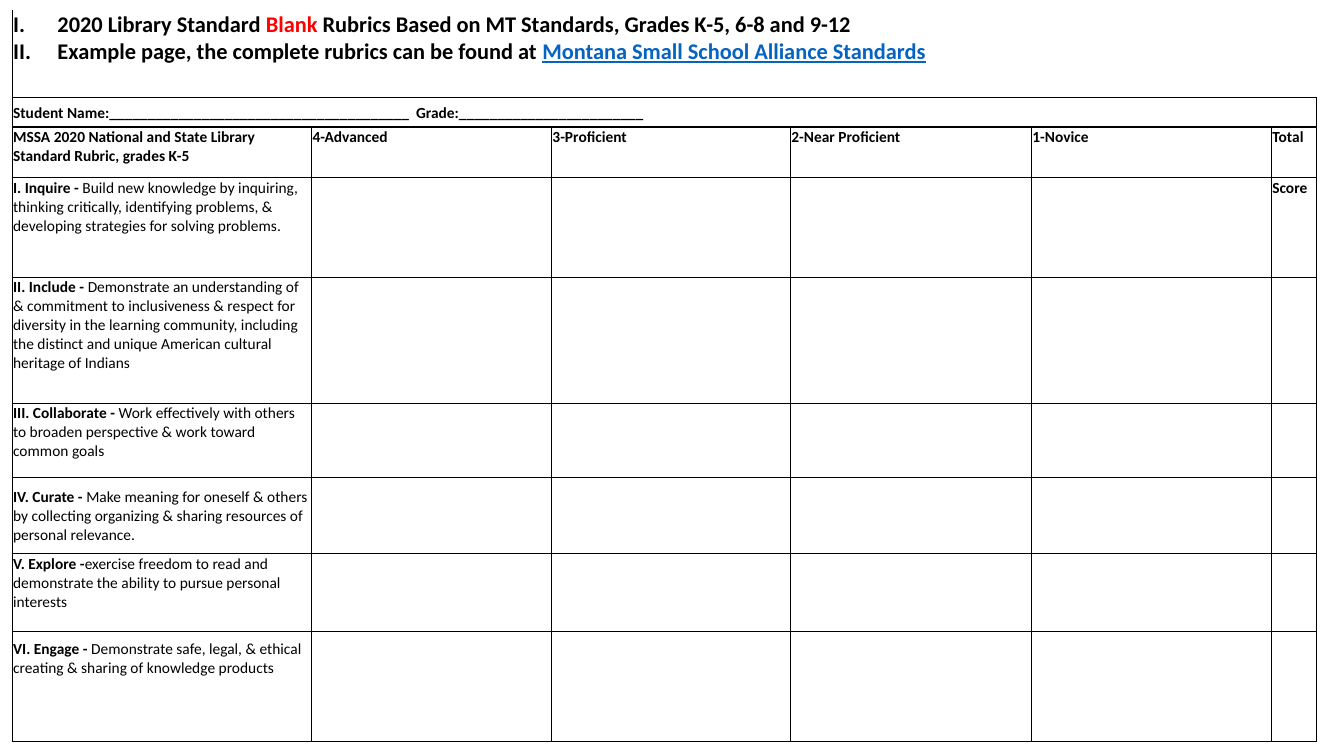
import pptx
import pptx.dml.color
import pptx.enum.text
import pptx.oxml
import pptx.oxml.ns
import pptx.util
from lxml import etree

Inches = pptx.util.Inches
Pt = pptx.util.Pt
qn = pptx.oxml.ns.qn

FONT = "Calibri"
COLORS = {"text": "000000", "accent": "FF0000", "link": "0563C1"}
NO_GRID_STYLE = "{2D5ABB26-0587-4C30-8999-92F81FD0307C}"
COL_WIDTHS = [2.97, 2.38, 2.37, 2.39, 2.38, 0.45]
ROW_HEIGHTS = [0.87, 0.29, 0.5, 0.99, 1.25, 0.74, 0.75, 0.77, 1.1]

TITLE = [
    [("2020 Library Standard ", "text"), ("Blank ", "accent"),
     ("Rubrics Based on MT Standards, Grades K-5, 6-8 and 9-12", "text")],
    [("Example page, the complete rubrics can be found at ", "text"),
     ("Montana Small School Alliance Standards", "link")],
]
STUDENT_LINE = "Student Name:" + "_" * 39 + "  Grade:" + "_" * 24
HEADINGS = ["MSSA 2020 National and State Library Standard Rubric, grades K-5",
            "4-Advanced", "3-Proficient", "2-Near Proficient", "1-Novice", "Total"]
STANDARDS = [
    ("I. Inquire - ", "Build new knowledge by inquiring, thinking critically, "
     "identifying problems, & developing strategies for solving problems."),
    ("II. Include - ", "Demonstrate an understanding of & commitment to inclusiveness "
     "& respect for diversity in the learning community, including the distinct and "
     "unique American cultural heritage of Indians"),
    ("III. Collaborate - ", "Work effectively with others to broaden perspective "
     "& work toward common goals"),
    ("IV. Curate -", " Make meaning for oneself & others by collecting organizing "
     "& sharing resources of personal relevance."),
    ("V. Explore -", "exercise freedom to read and demonstrate the ability to pursue "
     "personal interests"),
    ("VI. Engage - ", "Demonstrate safe, legal, & ethical creating & sharing of "
     "knowledge products"),
]


def add_run(p, text, size=11, bold=True, color="text"):
    r = p.add_run()
    r.text = text
    r.font.name = FONT
    r.font.size = Pt(size)
    r.font.bold = bold
    r.font.underline = color == "link"
    r.font.color.rgb = pptx.dml.color.RGBColor.from_string(COLORS[color])


def number_paragraph(p):
    """Give the paragraph an upper-case Roman number and a hanging indent."""
    pPr = p._p.get_or_add_pPr()
    pPr.set("marL", str(Inches(0.44)))
    pPr.set("indent", str(-Inches(0.44)))
    etree.SubElement(pPr, qn("a:buFont"), typeface="+mj-lt")
    etree.SubElement(pPr, qn("a:buAutoNum"), type="romanUcPeriod")


def set_borders(cell, widths):
    """Draw the edges in widths (L, R, T, B to points) and clear the others."""
    tcPr = cell._tc.get_or_add_tcPr()
    for edge in "LRTB":
        ln = etree.SubElement(tcPr, qn("a:ln" + edge), w=str(Pt(widths.get(edge, 0.5))))
        if edge in widths:
            fill = etree.SubElement(ln, qn("a:solidFill"))
            etree.SubElement(fill, qn("a:srgbClr"), val=COLORS["text"])
        else:
            etree.SubElement(ln, qn("a:noFill"))


def cell_edges(row, col, last_row, last_col):
    if row == 0:
        edges = {"B": 1}
    elif row == 1:
        edges = {"T": 1, "B": 1}
    else:
        edges = dict.fromkeys("LRTB", 0.5)
        if row == 2:
            edges["T"] = 1
        if row == last_row and col < 3:
            edges["B"] = 1
    if col == 0:
        edges["L"] = 1
    if row == 1 and col == last_col:
        edges["R"] = 1
    return edges


def format_cell(cell, edges):
    cell.margin_left = cell.margin_right = cell.margin_top = Inches(0.01)
    cell.margin_bottom = 0
    set_borders(cell, edges)
    cell.fill.background()
    p = cell.text_frame.paragraphs[0]._p
    etree.SubElement(p, qn("a:endParaRPr"), sz="1100")


def add_rubric_table(s):
    frame = s.shapes.add_table(len(ROW_HEIGHTS), len(COL_WIDTHS), Inches(0.12), Inches(0.1),
                               Inches(sum(COL_WIDTHS)), Inches(sum(ROW_HEIGHTS)))
    table = frame.table
    table.first_row = table.horz_banding = False
    table._tbl.tblPr.find(qn("a:tableStyleId")).text = NO_GRID_STYLE
    for column, width in zip(table.columns, COL_WIDTHS):
        column.width = Inches(width)
    for row, height in zip(table.rows, ROW_HEIGHTS):
        row.height = Inches(height)
    last_row, last_col = len(ROW_HEIGHTS) - 1, len(COL_WIDTHS) - 1
    for i in range(last_row + 1):
        for j in range(last_col + 1):
            format_cell(table.cell(i, j), cell_edges(i, j, last_row, last_col))
    table.cell(0, 0).merge(table.cell(0, last_col))
    table.cell(1, 0).merge(table.cell(1, 2))
    return table


def fill_title(cell):
    tf = cell.text_frame
    for i, parts in enumerate(TITLE):
        p = tf.add_paragraph() if i else tf.paragraphs[0]
        number_paragraph(p)
        for text, color in parts:
            add_run(p, text, size=16, color=color)


def fill_rubric(table):
    middle = pptx.enum.text.MSO_ANCHOR.MIDDLE
    student = table.cell(1, 0)
    student.vertical_anchor = middle
    add_run(student.text_frame.paragraphs[0], STUDENT_LINE)
    for j, heading in enumerate(HEADINGS):
        add_run(table.cell(2, j).text_frame.paragraphs[0], heading)
    for i, (name, description) in enumerate(STANDARDS, start=3):
        p = table.cell(i, 0).text_frame.paragraphs[0]
        add_run(p, name)
        add_run(p, description, bold=False)
    add_run(table.cell(3, 5).text_frame.paragraphs[0], "Score")
    table.cell(6, 0).vertical_anchor = middle
    table.cell(8, 0).margin_top = Inches(0.09)


def main():
    prs = pptx.Presentation()
    prs.slide_width = Inches(13.33)
    prs.slide_height = Inches(7.5)
    s = prs.slides.add_slide(prs.slide_layouts[6])
    table = add_rubric_table(s)
    fill_title(table.cell(0, 0))
    fill_rubric(table)
    prs.save("out.pptx")


if __name__ == "__main__":
    main()
